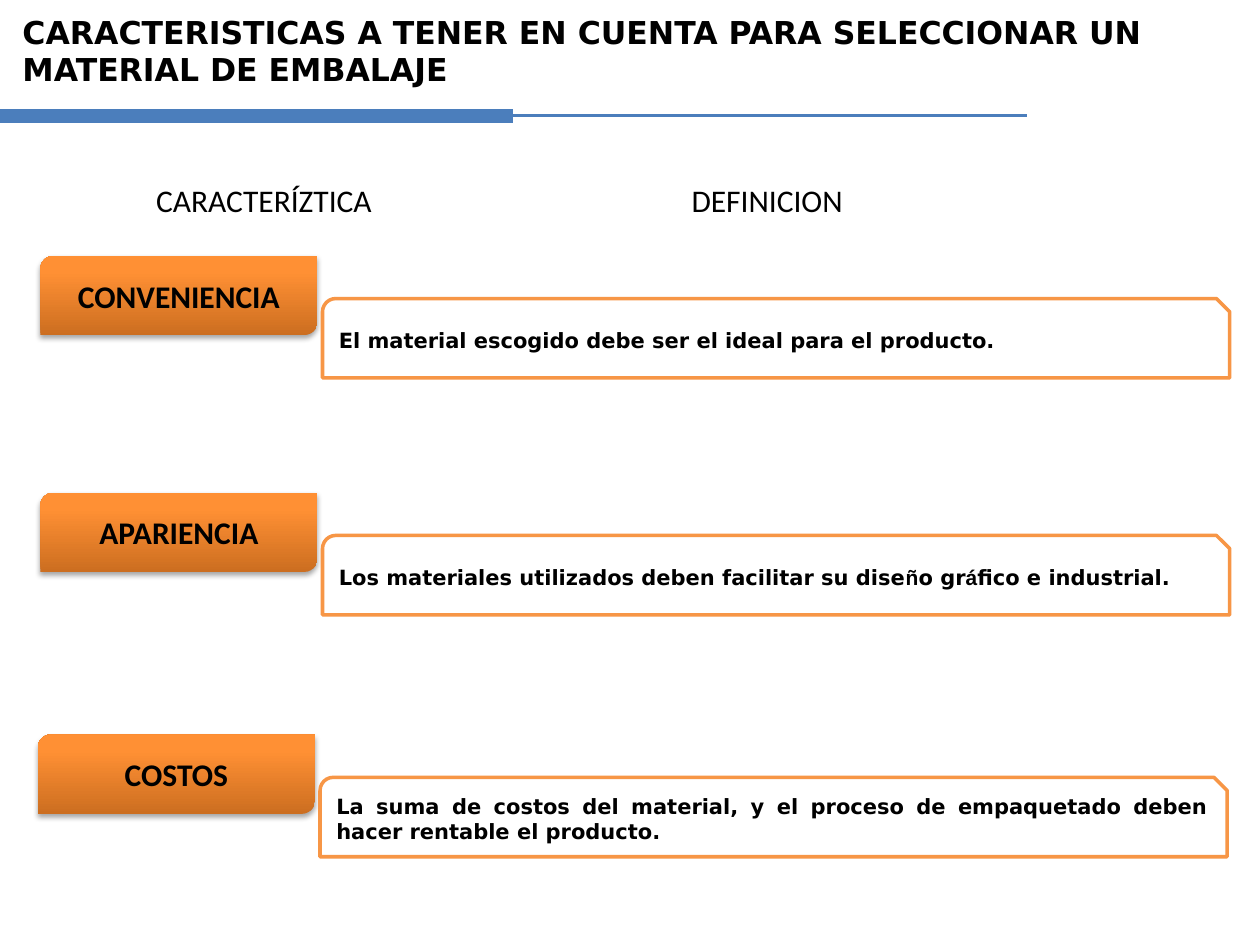
from dataclasses import dataclass
from itertools import groupby

from pptx import Presentation
from pptx.dml.color import RGBColor
from pptx.enum.shapes import MSO_CONNECTOR as Connector, MSO_SHAPE as Shape
from pptx.enum.text import MSO_ANCHOR as Anchor, PP_ALIGN as Align
from pptx.oxml import parse_xml
from pptx.oxml.ns import nsdecls
from pptx.util import Inches, Pt

COLORS = {
    "text": "000000",
    "paper": "FFFFFF",
    "outline": "F79646",
    "rule": "4B7EBC",
    "dark": "CC6E20",
    "bright": "FF9034",
    "top": "FF9136",
}
HEADING_FONT, LABEL_FONT, ACCENT_FONT = "DejaVu Sans", "Calibri", "Arial"
ACCENTED = "ñá"  # letters of the definitions set in the accent font

BOX_HEIGHT = 0.63
LABEL_WIDTH, DEFINITION_WIDTH = 2.2, 7.2
DEFINITION_SHIFT, DEFINITION_DROP = 2.24, 0.34


@dataclass(frozen=True)
class Feature:
    name: str
    definition: str
    left: float
    top: float


FEATURES = [
    Feature("CONVENIENCIA",
            "El material escogido debe ser el ideal para el producto.", 0.32, 2.03),
    Feature("APARIENCIA",
            "Los materiales utilizados deben facilitar su diseño gráfico e industrial.",
            0.32, 3.91),
    Feature("COSTOS",
            "La suma de costos del material, y el proceso de empaquetado deben "
            "hacer rentable el producto.", 0.3, 5.83),
]


def color(name: str) -> RGBColor:
    return RGBColor.from_string(COLORS[name])


def add_span(para, text: str, font: str, size: float, bold: bool) -> None:
    span = para.add_run()
    span.text = text
    span.font.name = font
    span.font.size = Pt(size)
    span.font.bold = bold
    span.font.color.rgb = color("text")


def add_text(slide, text: str, left: float, top: float, width: float, height: float,
             font: str, bold: bool = False, anchor=Anchor.TOP) -> None:
    box = slide.shapes.add_textbox(Inches(left), Inches(top), Inches(width), Inches(height))
    frame = box.text_frame
    frame.word_wrap = True
    frame.vertical_anchor = anchor
    add_span(frame.paragraphs[0], text, font, 18, bold)


def add_rule(slide, length: float, weight: float) -> None:
    rule = slide.shapes.add_connector(
        Connector.STRAIGHT, Inches(0), Inches(0.92), Inches(length), Inches(0.92))
    rule.line.color.rgb = color("rule")
    rule.line.width = Pt(weight)
    rule._element.spPr.append(parse_xml(f"<a:effectLst {nsdecls('a')}/>"))


def add_box(slide, kind, left: float, top: float, width: float, align):
    box = slide.shapes.add_shape(
        kind, Inches(left), Inches(top), Inches(width), Inches(BOX_HEIGHT))
    box.shadow.inherit = False
    frame = box.text_frame
    frame.word_wrap = True
    frame.vertical_anchor = Anchor.MIDDLE
    frame.paragraphs[0].alignment = align
    return box


def add_glossy_finish(box) -> None:
    """Give the box its vertical gradient and soft drop shadow."""
    stops = "".join(
        f'<a:gs pos="{percent * 1000}"><a:srgbClr val="{COLORS[name]}"/></a:gs>'
        for percent, name in ((0, "dark"), (80, "bright"), (100, "top")))
    gradient = parse_xml(
        f'<a:gradFill {nsdecls("a")} rotWithShape="1"><a:gsLst>{stops}</a:gsLst>'
        '<a:lin ang="16200000" scaled="0"/></a:gradFill>')
    shadow = parse_xml(
        f'<a:outerShdw {nsdecls("a")} blurRad="{Pt(3.1)}" dist="{Pt(1.8)}" dir="5400000" '
        f'rotWithShape="0"><a:srgbClr val="{COLORS["text"]}"><a:alpha val="35000"/>'
        '</a:srgbClr></a:outerShdw>')
    box.line.fill.background()
    properties = box._element.spPr
    properties.prstGeom.addnext(gradient)
    properties.effectLst.append(shadow)


def add_feature(slide, feature: Feature) -> None:
    # Name
    label = add_box(slide, Shape.ROUND_2_DIAG_RECTANGLE, feature.left, feature.top,
                    LABEL_WIDTH, Align.CENTER)
    add_glossy_finish(label)
    add_span(label.text_frame.paragraphs[0], feature.name, LABEL_FONT, 18, True)

    # Definition
    panel = add_box(slide, Shape.SNIP_ROUND_RECTANGLE, feature.left + DEFINITION_SHIFT,
                    feature.top + DEFINITION_DROP, DEFINITION_WIDTH, Align.JUSTIFY)
    panel.fill.solid()
    panel.fill.fore_color.rgb = color("paper")
    panel.line.color.rgb = color("outline")
    panel.line.width = Pt(2)
    para = panel.text_frame.paragraphs[0]
    for accented, letters in groupby(feature.definition, lambda letter: letter in ACCENTED):
        font = ACCENT_FONT if accented else HEADING_FONT
        add_span(para, "".join(letters), font, 12, True)


def main() -> None:
    deck = Presentation()
    deck.slide_width, deck.slide_height = Inches(10), Inches(7.5)
    slide = deck.slides.add_slide(deck.slide_layouts[6])

    # Title and its double rule
    add_text(slide, "CARACTERISTICAS A TENER EN CUENTA PARA SELECCIONAR UN MATERIAL DE EMBALAJE",
             0.08, 0.05, 9.81, 0.7, HEADING_FONT, True, Anchor.MIDDLE)
    add_rule(slide, 8.15, 1.75)
    add_rule(slide, 4.07, 8)

    # Column headings
    for heading, left in (("CARACTERÍZTICA", 1.14), ("DEFINICION", 5.39)):
        add_text(slide, heading, left, 1.39, 1.97, 0.4, LABEL_FONT)

    # Features with their definitions
    for feature in FEATURES:
        add_feature(slide, feature)

    deck.save("out.pptx")


if __name__ == "__main__":
    main()
